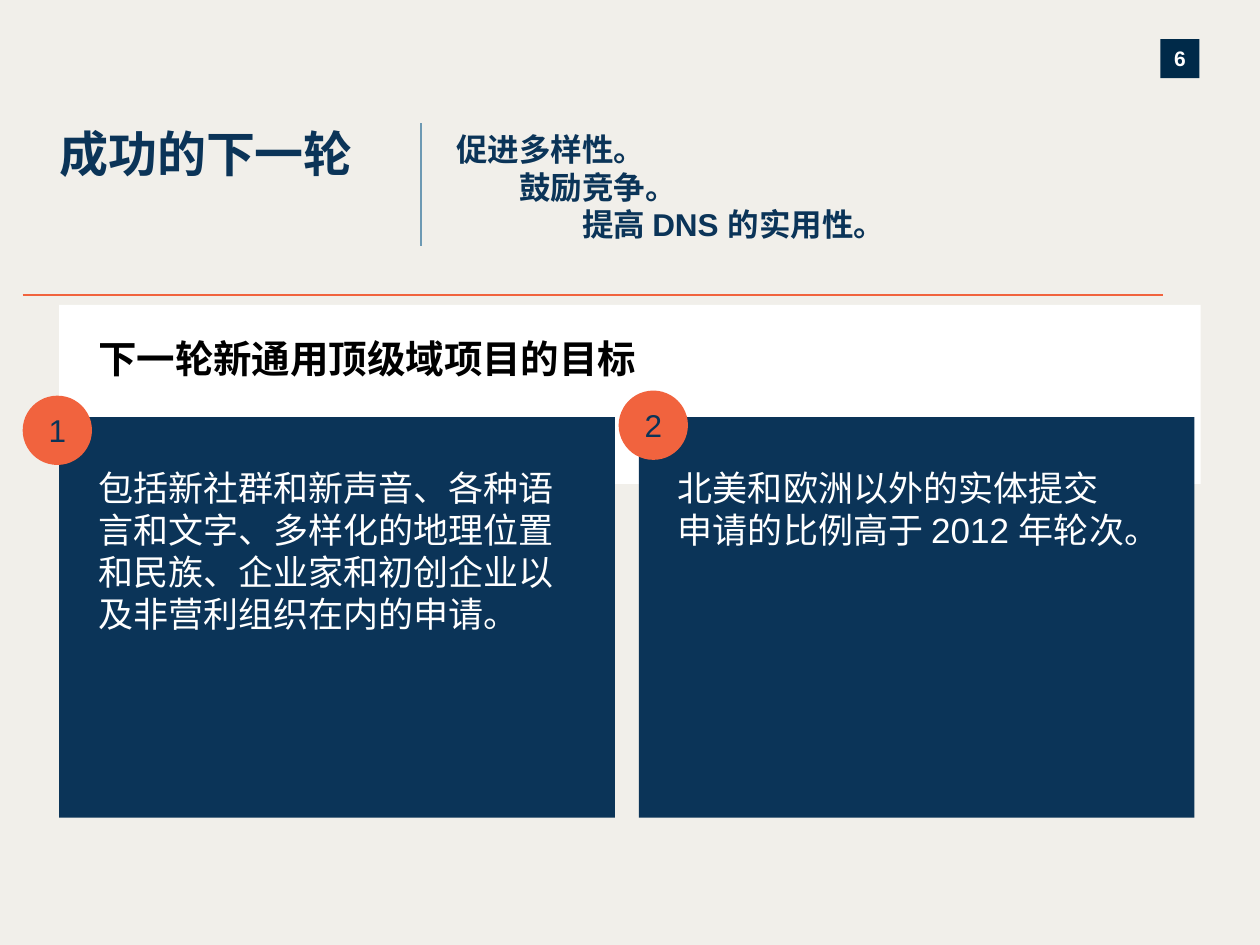
from lxml.etree import SubElement
from pptx import Presentation
from pptx.dml.color import RGBColor
from pptx.enum.shapes import MSO_CONNECTOR, MSO_SHAPE
from pptx.enum.text import MSO_ANCHOR, PP_ALIGN
from pptx.oxml.ns import qn
from pptx.util import Inches, Pt

NAVY = "0B3458"
ORANGE = "F1633E"
WHITE = "FFFFFF"
CARD_TOP, CARD_WIDTH, CARD_HEIGHT = 3.31, 4.41, 3.18
BADGE_SIZE = 0.55


def paint(color_holder, color):
    """Give a fill a solid colour from a hex string."""
    color_holder.solid()
    color_holder.fore_color.rgb = RGBColor.from_string(color)


def write(shape, text, size=18, color=NAVY, bold=False, align=PP_ALIGN.LEFT,
          anchor=MSO_ANCHOR.TOP, insets=(0, 0, 0, 0)):
    """Write one paragraph per line of text into a shape."""
    frame = shape.text_frame
    frame.word_wrap = True
    frame.vertical_anchor = anchor
    (frame.margin_left, frame.margin_top,
     frame.margin_right, frame.margin_bottom) = map(Inches, insets)
    for index, line in enumerate(text.split("\n")):
        paragraph = frame.paragraphs[0] if index == 0 else frame.add_paragraph()
        paragraph.alignment = align
        run = paragraph.add_run()
        run.text = line
        run.font.name = "Arial"
        run.font.size = Pt(size)
        run.font.bold = bold
        paint(run.font.fill, color)


def add_panel(slide, box, fill, text, preset=MSO_SHAPE.RECTANGLE, **text_format):
    """Add a filled, borderless shape with text."""
    panel = slide.shapes.add_shape(preset, *map(Inches, box))
    panel.shadow.inherit = False
    paint(panel.fill, fill)
    panel.line.fill.background()
    write(panel, text, **text_format)


def add_heading(slide, box, text, **text_format):
    """Add a bold text box without insets."""
    heading = slide.shapes.add_textbox(*map(Inches, box))
    write(heading, text, bold=True, **text_format)


def add_rule(slide, start, end, color):
    """Add a thin straight rule without a shadow."""
    rule = slide.shapes.add_connector(
        MSO_CONNECTOR.STRAIGHT, *map(Inches, start + end))
    paint(rule.line.fill, color)
    rule.line.width = Pt(1.25)
    SubElement(rule._element.spPr, qn("a:effectLst"))


def add_badge(slide, left, top, number):
    """Add a round numbered badge."""
    add_panel(slide, (left, top, BADGE_SIZE, BADGE_SIZE), ORANGE, number,
              preset=MSO_SHAPE.OVAL, align=PP_ALIGN.CENTER,
              anchor=MSO_ANCHOR.MIDDLE, insets=(0.1, 0.05, 0.1, 0.05))


def main():
    """Build the slide and save it."""
    deck = Presentation()
    deck.slide_width, deck.slide_height = Inches(10), Inches(7.5)
    slide = deck.slides.add_slide(deck.slide_layouts[6])
    paint(slide.background.fill, "F1EFEA")

    add_panel(slide, (9.21, 0.31, 0.31, 0.31), "002A49", "6", size=12,
              color=WHITE, bold=True, align=PP_ALIGN.CENTER,
              anchor=MSO_ANCHOR.MIDDLE)
    add_panel(slide, (0.47, 2.42, 9.06, 1.42), WHITE,
              "下一轮新通用顶级域项目的目标", size=22, color="000000", bold=True,
              insets=(0.31, 0.24, 0.79, 0.3))
    add_heading(slide, (0.47, 0.98, 3.25, 0.96), "成功的下一轮", size=28)
    add_heading(slide, (3.62, 1.03, 5.91, 0.91),
                "促进多样性。\n\t鼓励竞争。\n\t\t提高 DNS 的实用性。")
    add_rule(slide, (3.34, 0.98), (3.34, 1.95), "6D99B3")

    goals = [
        (5.07, 0.55, "北美和欧洲以外的实体提交申请的比例高于 2012 年轮次。"),
        (0.47, 0.31, "包括新社群和新声音、各种语言和文字、多样化的地理位置和民族、"
                     "企业家和初创企业以及非营利组织在内的申请。"),
    ]
    for left, right_inset, goal in goals:
        add_panel(slide, (left, CARD_TOP, CARD_WIDTH, CARD_HEIGHT), NAVY, goal,
                  size=20, color=WHITE, insets=(0.31, 0.39, right_inset, 0.3))
    add_badge(slide, 0.18, 3.14, "1")
    add_badge(slide, 4.91, 3.1, "2")
    add_rule(slide, (0.18, 2.34), (9.23, 2.34), ORANGE)

    deck.save("out.pptx")


if __name__ == "__main__":
    main()
